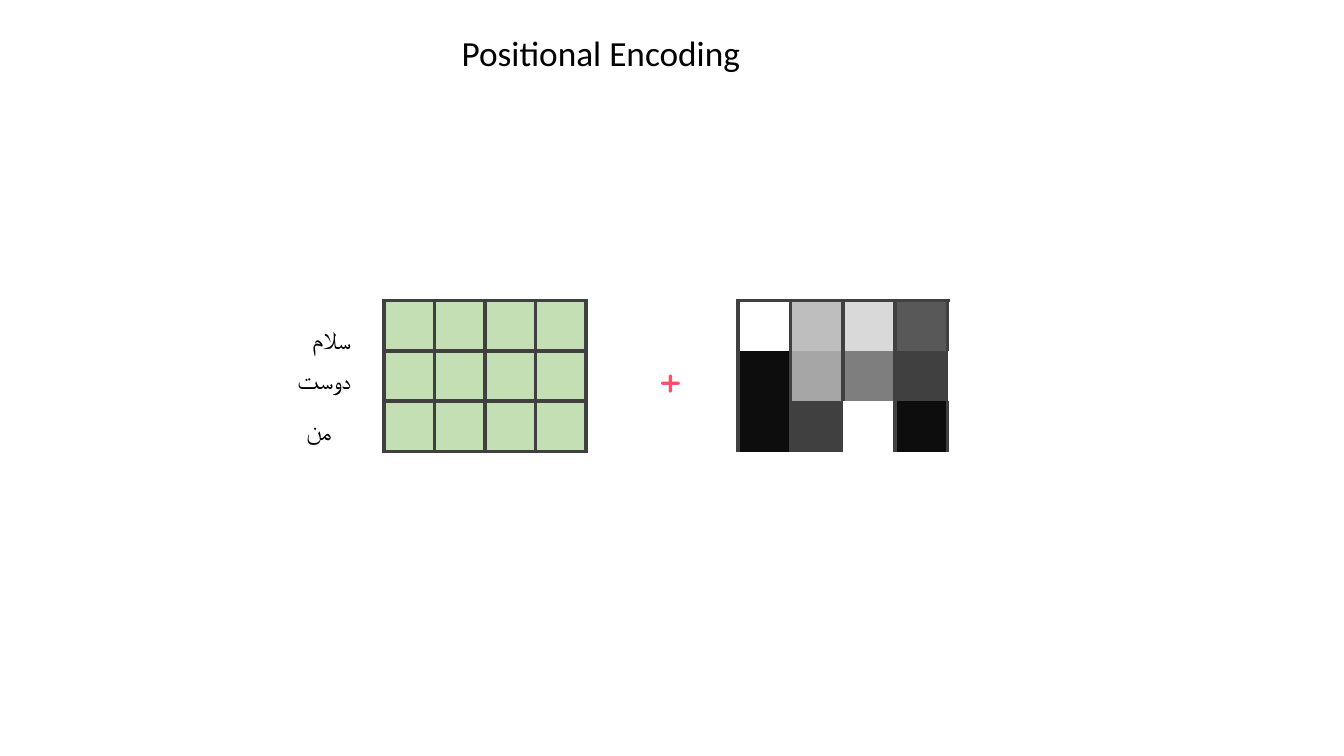
from lxml import etree
from pptx import Presentation
from pptx.dml.color import RGBColor
from pptx.enum.text import MSO_ANCHOR, PP_ALIGN
from pptx.oxml.ns import qn
from pptx.util import Inches, Pt

COLORS = {
    "border": "404040",
    "embedding": "C5DFB4",
    "plus": "FF4D6C",
    "text": "000000",
}
NO_STYLE = "{2D5ABB26-0587-4C30-8999-92F81FD0307C}"

# Each cell is (fill, bordered sides).
EMBEDDING = [[(COLORS["embedding"], "LRTB")] * 4] * 3
POSITIONS = [
    [("FFFFFF", "LRT"), ("BEBEBE", "LRT"), ("D9D9D9", "LRT"), ("585858", "LRT")],
    [("0D0D0D", "LR"), ("A6A6A6", "LR"), ("7E7E7E", "LR"), ("404040", "L")],
    [("0D0D0D", "LR"), ("404040", ""), ("FFFFFF", "R"), ("0D0D0D", "LR")],
]


def add_text(s, text, left, top, width, height, size=18, font="Calibri",
             color="text", align=PP_ALIGN.LEFT, anchor=MSO_ANCHOR.TOP,
             line_spacing=None, margins=(0.1, 0.05, 0.1, 0.05)):
    sp = s.shapes.add_textbox(Inches(left), Inches(top), Inches(width), Inches(height))
    tf = sp.text_frame
    tf.word_wrap = True
    tf.vertical_anchor = anchor
    tf.margin_left, tf.margin_top, tf.margin_right, tf.margin_bottom = map(Inches, margins)
    p = tf.paragraphs[0]
    p.alignment = align
    if line_spacing:
        p.line_spacing = line_spacing
    r = p.add_run()
    r.text = text
    r.font.size = Pt(size)
    r.font.name = font
    r.font.color.rgb = RGBColor.from_string(COLORS[color])


def format_cell(cell, fill, sides):
    tc_pr = cell._tc.get_or_add_tcPr()
    for side in sides:
        ln = etree.SubElement(tc_pr, qn(f"a:ln{side}"), w=str(Pt(3)))
        solid = etree.SubElement(ln, qn("a:solidFill"))
        etree.SubElement(solid, qn("a:srgbClr"), val=COLORS["border"])
    cell.fill.solid()
    cell.fill.fore_color.rgb = RGBColor.from_string(fill)


def add_matrix(s, cells, left, top, cell_width, cell_height):
    rows, cols = len(cells), len(cells[0])
    table = s.shapes.add_table(
        rows, cols, Inches(left), Inches(top),
        Inches(cols * cell_width), Inches(rows * cell_height)).table
    table.first_row = table.horz_banding = False
    table._tbl.tblPr.find(qn("a:tableStyleId")).text = NO_STYLE
    for i, row in enumerate(cells):
        for j, (fill, sides) in enumerate(row):
            format_cell(table.cell(i, j), fill, sides)
    return table


def main():
    prs = Presentation()
    prs.slide_width, prs.slide_height = Inches(13.33), Inches(7.5)
    s = prs.slides.add_slide(prs.slide_layouts[6])

    add_matrix(s, EMBEDDING, 3.81, 2.98, 0.5, 0.5)
    positions = add_matrix(s, POSITIONS, 7.32, 2.98, 0.52, 0.5)
    positions.cell(1, 0).merge(positions.cell(2, 0))

    add_text(s, "+", 6.52, 3.37, 0.3, 0.7, size=40, font="Comic Neue",
             color="plus", margins=(0.01, 0.02, 0, 0))
    add_text(s, "من", 2.94, 4.07, 0.87, 0.4)
    add_text(s, "دوست", 2.31, 3.57, 1.27, 0.4, align=PP_ALIGN.RIGHT)
    add_text(s, "سلام", 2.08, 3.17, 1.5, 0.4, align=PP_ALIGN.RIGHT)
    add_text(s, "Positional Encoding", 1.92, 0.31, 8.08, 0.47, size=25.2,
             align=PP_ALIGN.CENTER, anchor=MSO_ANCHOR.MIDDLE, line_spacing=0.9)

    prs.save("out.pptx")


if __name__ == "__main__":
    main()
